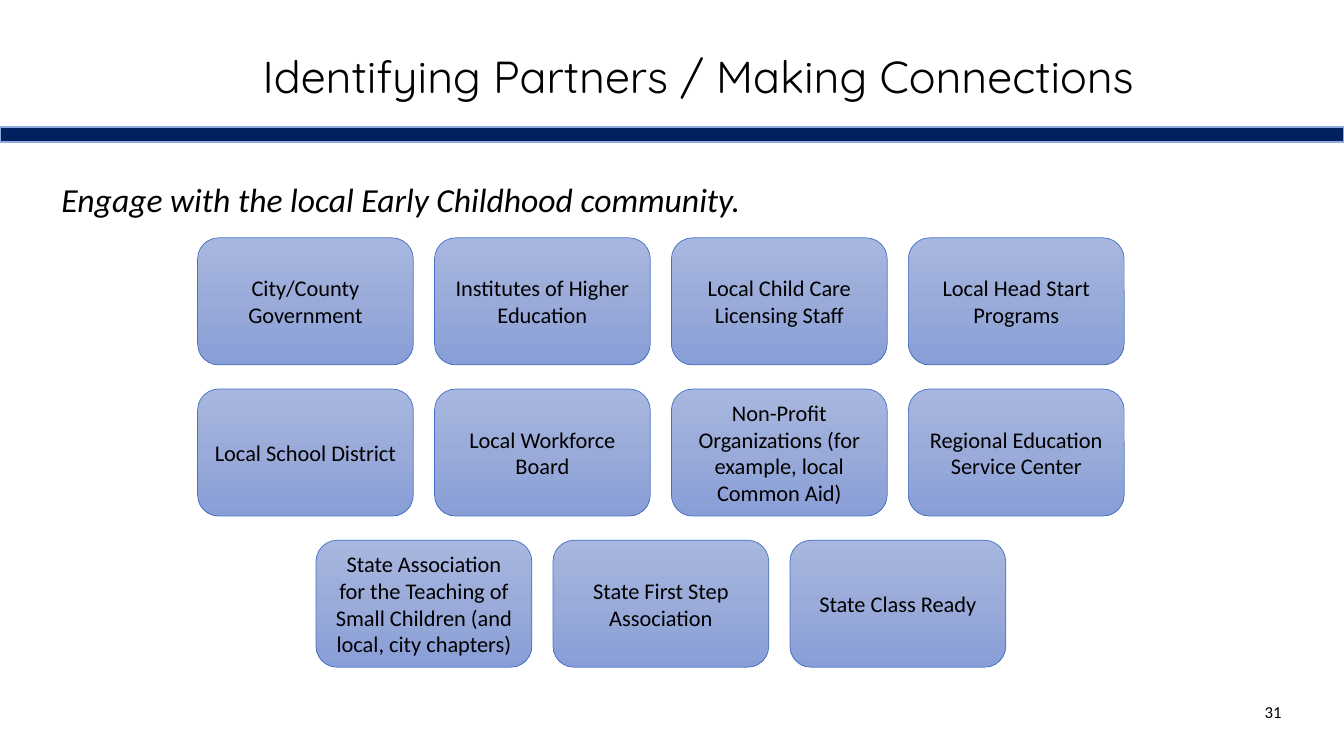
from copy import deepcopy

from lxml.etree import SubElement
from pptx import Presentation
from pptx.dml.color import RGBColor
from pptx.enum.shapes import MSO_SHAPE
from pptx.enum.text import MSO_ANCHOR, MSO_AUTO_SIZE, PP_ALIGN
from pptx.oxml.ns import qn
from pptx.util import Inches, Pt

BLACK = RGBColor(0x00, 0x00, 0x00)
NAVY = RGBColor(0x00, 0x20, 0x60)
BAR_EDGE = RGBColor(0x8F, 0xAA, 0xDC)
CARD_EDGE = RGBColor(0x44, 0x72, 0xC4)
CARD_TOP = RGBColor(0xA8, 0xB7, 0xDF)
CARD_MIDDLE = RGBColor(0x9A, 0xAB, 0xD9)
CARD_BOTTOM = RGBColor(0x88, 0x9E, 0xD7)

TITLE_FONT = {"name": "Quicksand", "size": Pt(32)}
LEAD_FONT = {"name": "Calibri", "size": Pt(24), "italic": True}
CARD_FONT = {"name": "Calibri", "size": Pt(16)}
NUMBER_FONT = {"name": "Calibri", "size": Pt(12)}

CARD_WIDTH, CARD_HEIGHT = 2.14, 1.26
COLUMN_STEP, ROW_STEP = 2.35, 1.5
PARTNER_ROWS = [
    [
        "City/County Government",
        "Institutes of Higher Education",
        "Local Child Care Licensing Staff",
        "Local Head Start Programs",
    ],
    [
        "Local School District",
        "Local Workforce Board",
        "Non-Profit Organizations (for example, local Common Aid)",
        "Regional Education Service Center",
    ],
    [
        "State Association for the Teaching of Small Children (and local, city chapters)",
        "State First Step Association",
        "State Class Ready",
    ],
]


def write_text(shape, text, font_format, alignment, anchor=MSO_ANCHOR.MIDDLE):
    frame = shape.text_frame
    frame.word_wrap = True
    frame.auto_size = MSO_AUTO_SIZE.NONE
    frame.vertical_anchor = anchor
    paragraph = frame.paragraphs[0]
    paragraph.alignment = alignment
    run = paragraph.add_run()
    run.text = text
    for name, value in font_format.items():
        setattr(run.font, name, value)
    run.font.color.rgb = BLACK
    return paragraph


def add_outlined_shape(slide, kind, box, edge, edge_width):
    shape = slide.shapes.add_shape(kind, *map(Inches, box))
    shape.shadow.inherit = False
    shape.line.color.rgb = edge
    shape.line.width = Pt(edge_width)
    return shape


def fill_card(shape):
    shape.fill.gradient()
    shape.fill.gradient_angle = 270
    stop_list = shape._element.spPr.find(qn("a:gradFill")).find(qn("a:gsLst"))
    for stop in list(stop_list):
        stop_list.remove(stop)
    for position, color in [(0, CARD_TOP), (50, CARD_MIDDLE), (100, CARD_BOTTOM)]:
        stop = SubElement(stop_list, qn("a:gs"), pos=str(position * 1000))
        SubElement(stop, qn("a:srgbClr"), val=str(color))


def add_title(slide, box):
    title = slide.shapes.title
    for name, value in zip(("left", "top", "width", "height"), box):
        setattr(title, name, Inches(value))
    paragraph = write_text(
        title, "Identifying Partners / Making Connections ", TITLE_FONT, PP_ALIGN.CENTER
    )
    paragraph.line_spacing = 0.9


def add_text_box(slide, box, text, font_format, alignment, anchor):
    text_box = slide.shapes.add_textbox(*map(Inches, box))
    write_text(text_box, text, font_format, alignment, anchor)


def add_divider(slide, box):
    bar = add_outlined_shape(slide, MSO_SHAPE.RECTANGLE, box, BAR_EDGE, 1)
    bar.fill.solid()
    bar.fill.fore_color.rgb = NAVY


def add_partner_cards(slide, box):
    left, top, width = box
    for row, partners in enumerate(PARTNER_ROWS):
        row_width = (len(partners) - 1) * COLUMN_STEP + CARD_WIDTH
        row_left = left + (width - row_width) / 2
        for column, partner in enumerate(partners):
            card_box = (
                row_left + column * COLUMN_STEP,
                top + row * ROW_STEP,
                CARD_WIDTH,
                CARD_HEIGHT,
            )
            card = add_outlined_shape(
                slide, MSO_SHAPE.ROUNDED_RECTANGLE, card_box, CARD_EDGE, 0.5
            )
            fill_card(card)
            write_text(card, partner, CARD_FONT, PP_ALIGN.CENTER)


def main():
    presentation = Presentation()
    presentation.slide_width = Inches(13.33)
    presentation.slide_height = Inches(7.5)
    slide = presentation.slides.add_slide(presentation.slide_layouts[5])
    add_title(slide, (0.67, 0.06, 12.64, 1.45))
    add_text_box(
        slide,
        (0.51, 1.73, 11.41, 0.5),
        "Engage with the local Early Childhood community.",
        LEAD_FONT,
        PP_ALIGN.LEFT,
        MSO_ANCHOR.TOP,
    )
    add_partner_cards(slide, (1.96, 2.36, 9.19))
    add_text_box(
        slide, (9.81, 6.86, 3, 0.4), "31", NUMBER_FONT, PP_ALIGN.RIGHT, MSO_ANCHOR.MIDDLE
    )
    add_divider(slide, (0, 1.26, 13.33, 0.15))
    presentation.save("out.pptx")


if __name__ == "__main__":
    main()
